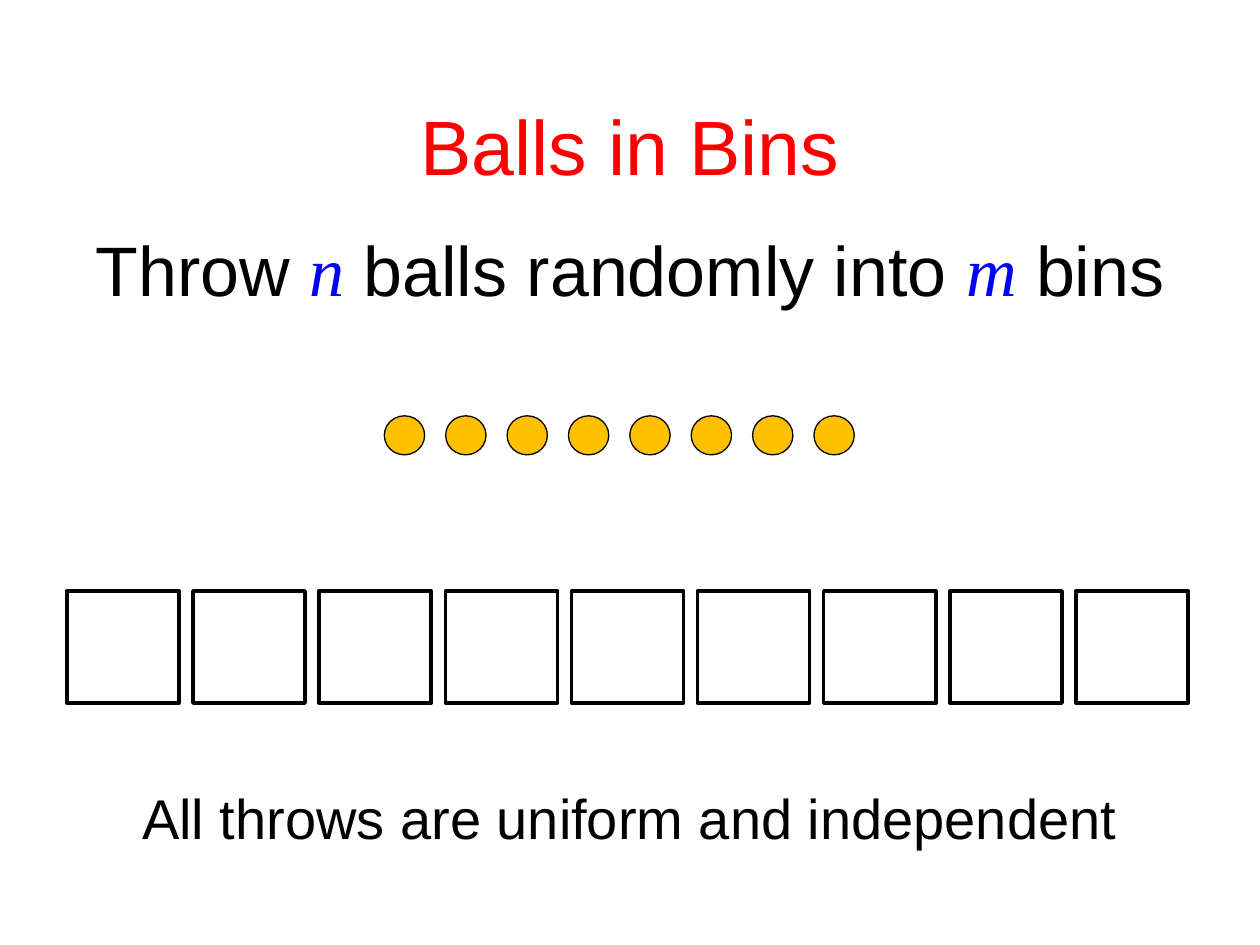
from pptx import Presentation
from pptx.dml.color import RGBColor
from pptx.enum import shapes, text
from pptx.util import Inches, Pt

RED = RGBColor(0xFF, 0x00, 0x00)
BLUE = RGBColor(0x00, 0x00, 0xFF)
BLACK = RGBColor(0x00, 0x00, 0x00)
GOLD = RGBColor(0xFF, 0xC0, 0x00)


def write(shape, runs, size, color=BLACK):
    """Fill shape with one centred line; runs are (words, is_math) pairs."""
    frame = shape.text_frame
    frame.word_wrap = True
    frame.auto_size = text.MSO_AUTO_SIZE.NONE
    frame.vertical_anchor = text.MSO_ANCHOR.MIDDLE
    line = frame.paragraphs[0]
    line.alignment = text.PP_ALIGN.CENTER
    for words, math in runs:
        run = line.add_run()
        run.text = words
        font = run.font
        font.size = Pt(size)
        font.name = "Times New Roman" if math else "Arial"
        font.italic = math
        font.color.rgb = BLUE if math else color


def title(slide, x, y, w, h):
    shape = slide.shapes.title
    shape.left, shape.top = Inches(x), Inches(y)
    shape.width, shape.height = Inches(w), Inches(h)
    write(shape, [("Balls in Bins", False)], 44, color=RED)


def caption(slide, x, y, w, h, runs, size):
    box = slide.shapes.add_textbox(Inches(x), Inches(y), Inches(w), Inches(h))
    write(box, runs, size)


def row(slide, x, y, w, h, kind, count, width, line, fill=None):
    """Spread count equal shapes evenly from edge to edge of the box."""
    step = (w - width) / (count - 1)
    for i in range(count):
        item = slide.shapes.add_shape(
            kind, Inches(x + i * step), Inches(y), Inches(width), Inches(h))
        item.shadow.inherit = False
        item.line.color.rgb = BLACK
        item.line.width = Pt(line)
        if fill is None:
            item.fill.background()
        else:
            item.fill.solid()
            item.fill.fore_color.rgb = fill


def main():
    deck = Presentation()
    deck.slide_width, deck.slide_height = Inches(10), Inches(7.5)
    slide = deck.slides.add_slide(deck.slide_layouts[5])
    title(slide, 0, 0.52, 10, 1.25)
    throw = [("Throw ", False), ("n", True), (" balls randomly into ", False),
             ("m", True), (" bins", False)]
    caption(slide, 0, 1.75, 10, 0.77, throw, 40)
    row(slide, 0.53, 4.69, 8.9, 0.89, shapes.MSO_SHAPE.RECTANGLE,
        count=9, width=0.89, line=2)
    row(slide, 3.05, 3.3, 3.73, 0.31, shapes.MSO_SHAPE.OVAL,
        count=8, width=0.32, line=0.75, fill=GOLD)
    caption(slide, 0, 5.86, 10, 1.25,
            [("All throws are uniform and independent", False)], 32)
    deck.save("out.pptx")


if __name__ == "__main__":
    main()
